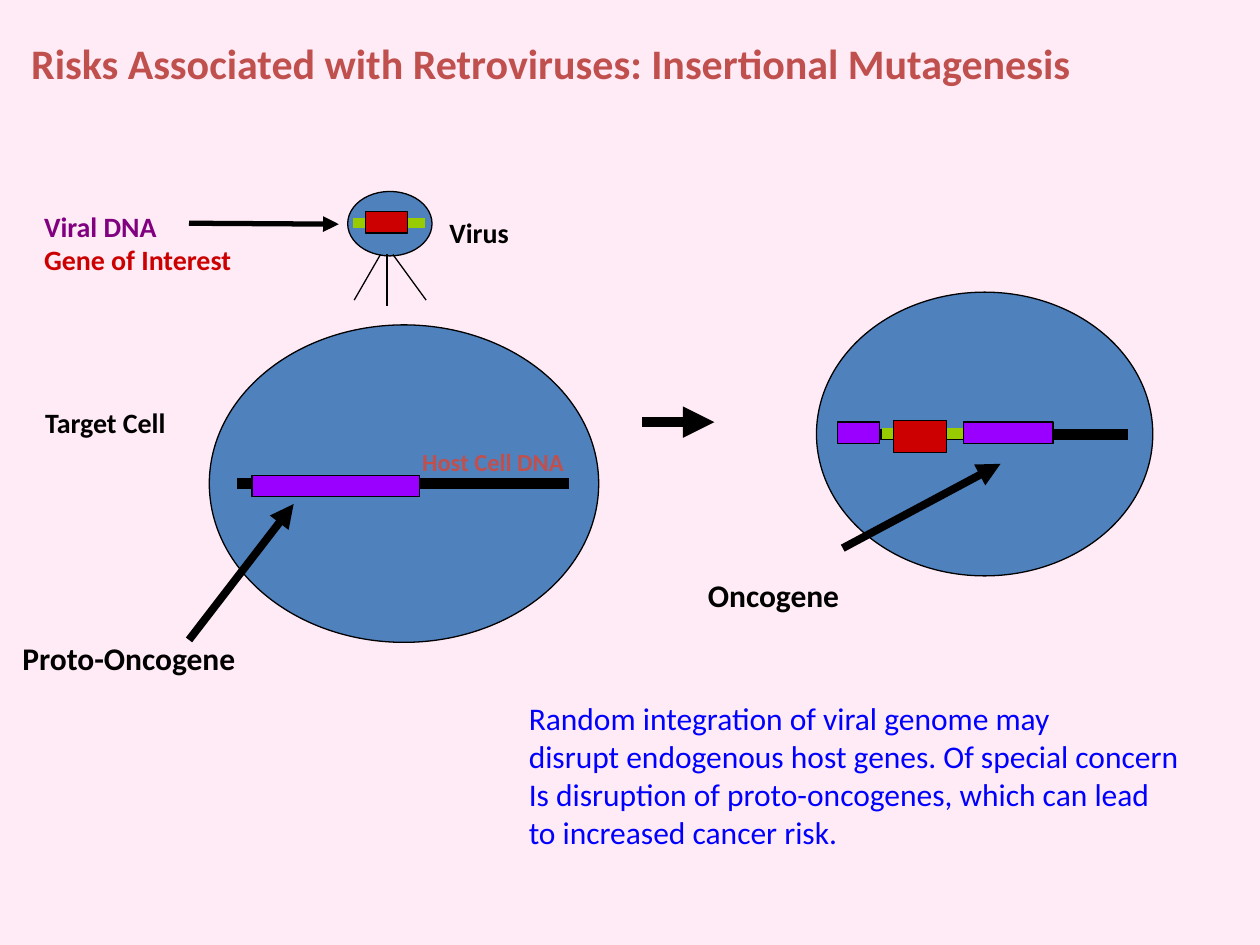
from pptx import Presentation
from pptx.dml.color import RGBColor
from pptx.enum.shapes import MSO_CONNECTOR, MSO_SHAPE
from pptx.enum.text import MSO_AUTO_SIZE
from pptx.oxml.ns import qn
from pptx.util import Cm, Pt
from lxml.etree import SubElement

COLOURS = {
    "background": "FFEBF5",
    "heading": "C0504D",
    "cell": "4F81BD",
    "black": "000000",
    "viral": "99CC00",
    "gene": "CC0000",
    "oncogene": "9900FF",
    "viral label": "800080",
    "note": "0000FF",
}


class Diagram:
    font = "Calibri"
    outline = 0.75
    strand_width = 6
    bar_height = 0.43

    def __init__(self, page):
        self.page = page
        page.background.fill.solid()
        page.background.fill.fore_color.rgb = self.colour("background")

    def colour(self, name):
        return RGBColor.from_string(COLOURS[name])

    def text(self, left, top, width, height, lines, size, bold=True):
        box = self.page.shapes.add_textbox(Cm(left), Cm(top), Cm(width), Cm(height))
        frame = box.text_frame
        frame.word_wrap = False
        frame.auto_size = MSO_AUTO_SIZE.SHAPE_TO_FIT_TEXT
        for index, (words, colour) in enumerate(lines):
            para = frame.add_paragraph() if index else frame.paragraphs[0]
            span = para.add_run()
            span.text = words
            span.font.name = self.font
            span.font.size = Pt(size)
            span.font.bold = bold
            span.font.color.rgb = self.colour(colour)

    def shape(self, kind, left, top, width, height, colour):
        shape = self.page.shapes.add_shape(kind, Cm(left), Cm(top), Cm(width), Cm(height))
        shape.shadow.inherit = False
        shape.fill.solid()
        shape.fill.fore_color.rgb = self.colour(colour)
        shape.line.color.rgb = self.colour("black")
        shape.line.width = Pt(self.outline)

    def cell(self, left, top, width, height):
        self.shape(MSO_SHAPE.OVAL, left, top, width, height, "cell")

    def bar(self, left, top, width, colour, height=bar_height):
        self.shape(MSO_SHAPE.RECTANGLE, left, top, width, height, colour)

    def line(self, start, end, width=outline, colour="black", arrow=False):
        points = [Cm(value) for value in (*start, *end)]
        line = self.page.shapes.add_connector(MSO_CONNECTOR.STRAIGHT, *points)
        line.line.color.rgb = self.colour(colour)
        line.line.width = Pt(width)
        if arrow:
            SubElement(line.line._get_or_add_ln(), qn("a:tailEnd"), type="triangle")
        SubElement(line._element.spPr, qn("a:effectLst"))

    def strand(self, left, right, height, colour="black"):
        self.line((left, height), (right, height), self.strand_width, colour)

    def arrow(self, start, end, width):
        self.line(start, end, width, arrow=True)


def draw_virus(diagram):
    diagram.cell(7.01, 3.86, 1.7, 1.3)
    for top_x, foot_x, foot_y in ((7.67, 7.14, 6.05), (7.8, 7.8, 6.17), (7.92, 8.59, 6.05)):
        diagram.line((top_x, 5.13), (foot_x, foot_y))
    diagram.strand(7.11, 8.56, 4.5, "viral")
    diagram.bar(7.37, 4.27, 0.84, "gene")
    diagram.text(8.81, 4.22, 1.93, 0.94, [("Virus", "black")], 16)
    labels = [("Viral DNA", "viral label"), ("Gene of Interest", "gene")]
    diagram.text(0.64, 4.09, 4.83, 1.63, labels, 16)
    diagram.arrow((3.81, 4.5), (6.83, 4.52), 3)


def draw_target_cell(diagram):
    diagram.cell(4.22, 6.55, 7.85, 6.4)
    diagram.strand(4.78, 11.48, 9.75)
    diagram.text(0.66, 8.05, 3.43, 0.94, [("Target Cell", "black")], 16)
    diagram.text(8.26, 8.89, 3.86, 0.84, [("Host Cell DNA", "heading")], 14)
    diagram.bar(5.08, 9.58, 3.38, "oncogene")
    diagram.text(0.2, 12.75, 5.49, 1.02, [("Proto-Oncogene", "black")], 18)
    diagram.arrow((3.81, 12.9), (5.92, 10.16), 4.5)


def draw_altered_cell(diagram):
    diagram.arrow((12.95, 8.51), (14.4, 8.51), 6)
    diagram.cell(16.46, 5.89, 6.78, 5.72)
    diagram.strand(16.94, 22.73, 8.76)
    diagram.strand(17.78, 19.58, 8.74, "viral")
    diagram.bar(18.01, 8.48, 1.07, "gene", 0.64)
    for left, width in ((16.89, 0.84), (19.43, 1.8)):
        diagram.bar(left, 8.51, width, "oncogene")
    diagram.text(14.02, 11.48, 3.61, 1.02, [("Oncogene", "black")], 18)
    diagram.arrow((16.99, 11.05), (20.17, 9.35), 4.5)


def main():
    deck = Presentation()
    deck.slide_width, deck.slide_height = Cm(25.4), Cm(19.05)
    diagram = Diagram(deck.slides.add_slide(deck.slide_layouts[6]))
    title = "Risks Associated with Retroviruses: Insertional Mutagenesis"
    diagram.text(0.38, 0.64, 25.02, 1.27, [(title, "heading")], 24)
    draw_virus(diagram)
    draw_target_cell(diagram)
    draw_altered_cell(diagram)
    note = (
        "Random integration of viral genome may",
        "disrupt endogenous host genes. Of special concern",
        "Is disruption of proto-oncogenes, which can lead",
        "to increased cancer risk.",
    )
    diagram.text(10.41, 13.97, 14.99, 3.3, [(words, "note") for words in note], 18, bold=False)
    deck.save("out.pptx")


if __name__ == "__main__":
    main()
